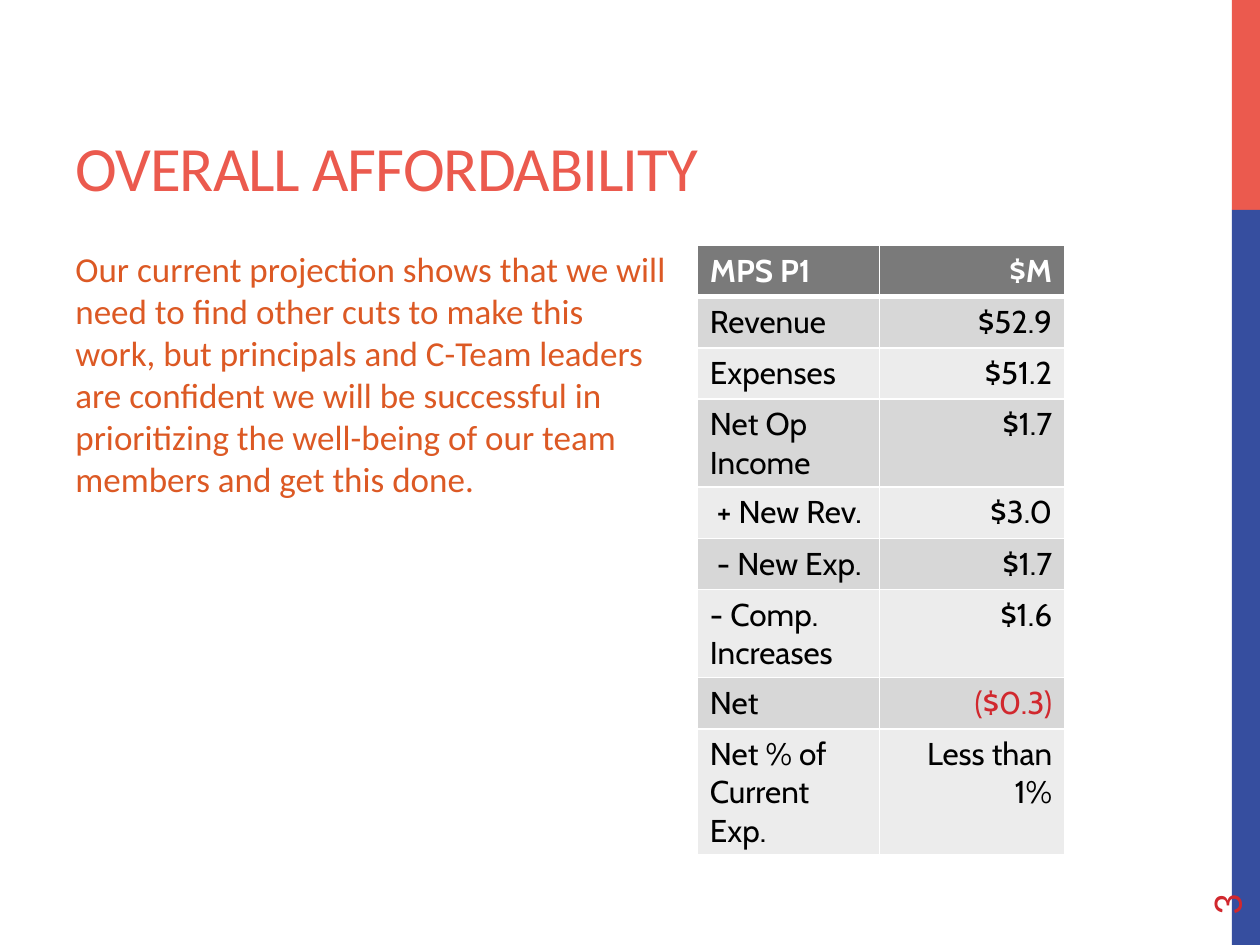
from dataclasses import dataclass

from lxml.etree import SubElement
from pptx import Presentation
from pptx.dml.color import RGBColor as Rgb
from pptx.enum.shapes import MSO_SHAPE as Preset
from pptx.enum.text import MSO_ANCHOR as Anchor, MSO_AUTO_SIZE as AutoSize, PP_ALIGN as Align
from pptx.oxml.ns import qn
from pptx.util import Pt


@dataclass(frozen=True)
class Theme:
    coral: Rgb = Rgb.from_string("EB5A4E")
    blue: Rgb = Rgb.from_string("364E9F")
    orange: Rgb = Rgb.from_string("DC5924")
    red: Rgb = Rgb.from_string("D1282E")
    white: Rgb = Rgb.from_string("FFFFFF")
    black: Rgb = Rgb.from_string("000000")
    header: Rgb = Rgb.from_string("7A7A7A")
    bands: tuple = (Rgb.from_string("D7D7D7"), Rgb.from_string("ECECEC"))
    text_font: str = "Calibri"
    table_font: str = "Cabin"
    title_size: int = 36
    number_size: int = 24
    body_size: int = 20
    table_size: int = 18


THEME = Theme()
ROWS = [
    ("MPS P1", "$M"),
    ("Revenue", "$52.9"),
    ("Expenses", "$51.2"),
    ("Net Op Income", "$1.7"),
    ("+ New Rev.", "$3.0"),
    ("- New Exp.", "$1.7"),
    ("- Comp. Increases", "$1.6"),
    ("Net", "($0.3)"),
    ("Net % of Current Exp.", "Less than 1%"),
]
INDENTED = {"+ New Rev.", "- New Exp."}
PROJECTION = (
    "Our current projection shows that we will need to find other cuts to make this work, "
    "but principals and C-Team leaders are confident we will be successful in prioritizing "
    "the well-being of our team members and get this done."
)


def apply(target, values):
    for name, value in values.items():
        setattr(target, name, value)


def place(shape, box):
    apply(shape, dict(zip(("left", "top", "width", "height"), map(Pt, box))))


def write(frame, text, size, color, font=THEME.text_font, bold=False, align=Align.LEFT):
    paragraph = frame.paragraphs[0]
    paragraph.alignment = align
    run = paragraph.add_run()
    run.text = text
    apply(run.font, {"name": font, "size": Pt(size), "bold": bold})
    run.font.color.rgb = color
    return run


def add_side_bar(slide, box):
    left, top, width, height = box
    split = 120
    parts = [(top, split, THEME.coral), (top + split, height - split, THEME.blue)]
    for part_top, part_height, color in parts:
        bar = slide.shapes.add_shape(
            Preset.RECTANGLE, *map(Pt, (left, part_top, width, part_height)))
        bar.shadow.inherit = False
        bar.fill.solid()
        bar.fill.fore_color.rgb = color
        bar.line.fill.background()


def add_title(slide, box):
    title = slide.shapes.title
    place(title, box)
    apply(title.text_frame, {
        "word_wrap": True, "vertical_anchor": Anchor.BOTTOM, "auto_size": AutoSize.NONE})
    run = write(title.text_frame, "OVERALL AFFORDABILITY", THEME.title_size, THEME.coral)
    run.font._element.set("spc", "-60")


def add_text(slide, box, text, size, color, anchor=Anchor.TOP, rotation=0):
    shape = slide.shapes.add_textbox(*map(Pt, box))
    shape.rotation = rotation
    apply(shape.text_frame, {"word_wrap": True, "vertical_anchor": anchor})
    write(shape.text_frame, text, size, color)


def set_borders(cell, bottom_width):
    properties = cell._tc.get_or_add_tcPr()
    widths = {"a:lnL": 1, "a:lnR": 1, "a:lnT": 1, "a:lnB": bottom_width}
    for tag, width in widths.items():
        line = SubElement(properties, qn(tag), w=str(Pt(width)))
        fill = SubElement(line, qn("a:solidFill"))
        SubElement(fill, qn("a:srgbClr"), val=str(THEME.white))


def add_budget_table(slide, box):
    table = slide.shapes.add_table(len(ROWS), 2, *map(Pt, box)).table
    for column, width in zip(table.columns, (104.2, 105.8)):
        column.width = Pt(width)
    for row_index, values in enumerate(ROWS):
        is_header = row_index == 0
        fill = THEME.header if is_header else THEME.bands[(row_index - 1) % 2]
        for column_index, text in enumerate(values):
            cell = table.cell(row_index, column_index)
            set_borders(cell, 3 if is_header or row_index == 0 else 1)
            cell.fill.solid()
            cell.fill.fore_color.rgb = fill
            if text in INDENTED:
                cell.margin_left = Pt(11.2)
            color = THEME.white if is_header else THEME.black
            if text.startswith("("):
                color = THEME.red
            write(cell.text_frame, text, THEME.table_size, color, THEME.table_font,
                  is_header, Align.RIGHT if column_index else Align.LEFT)


def main():
    presentation = Presentation()
    apply(presentation, {"slide_width": Pt(720), "slide_height": Pt(540)})
    slide = presentation.slides.add_slide(presentation.slide_layouts[5])
    add_side_bar(slide, (704, 0, 16, 540))
    add_title(slide, (36, 12, 572.4, 108))
    add_text(slide, (36, 138, 353, 344), PROJECTION, THEME.body_size, THEME.orange)
    add_budget_table(slide, (398.5, 140.4, 210, 29.2 * len(ROWS)))
    add_text(slide, (648, 463.5, 104, 29), "3", THEME.number_size, THEME.red,
             Anchor.MIDDLE, 270)
    presentation.save("out.pptx")


if __name__ == "__main__":
    main()
